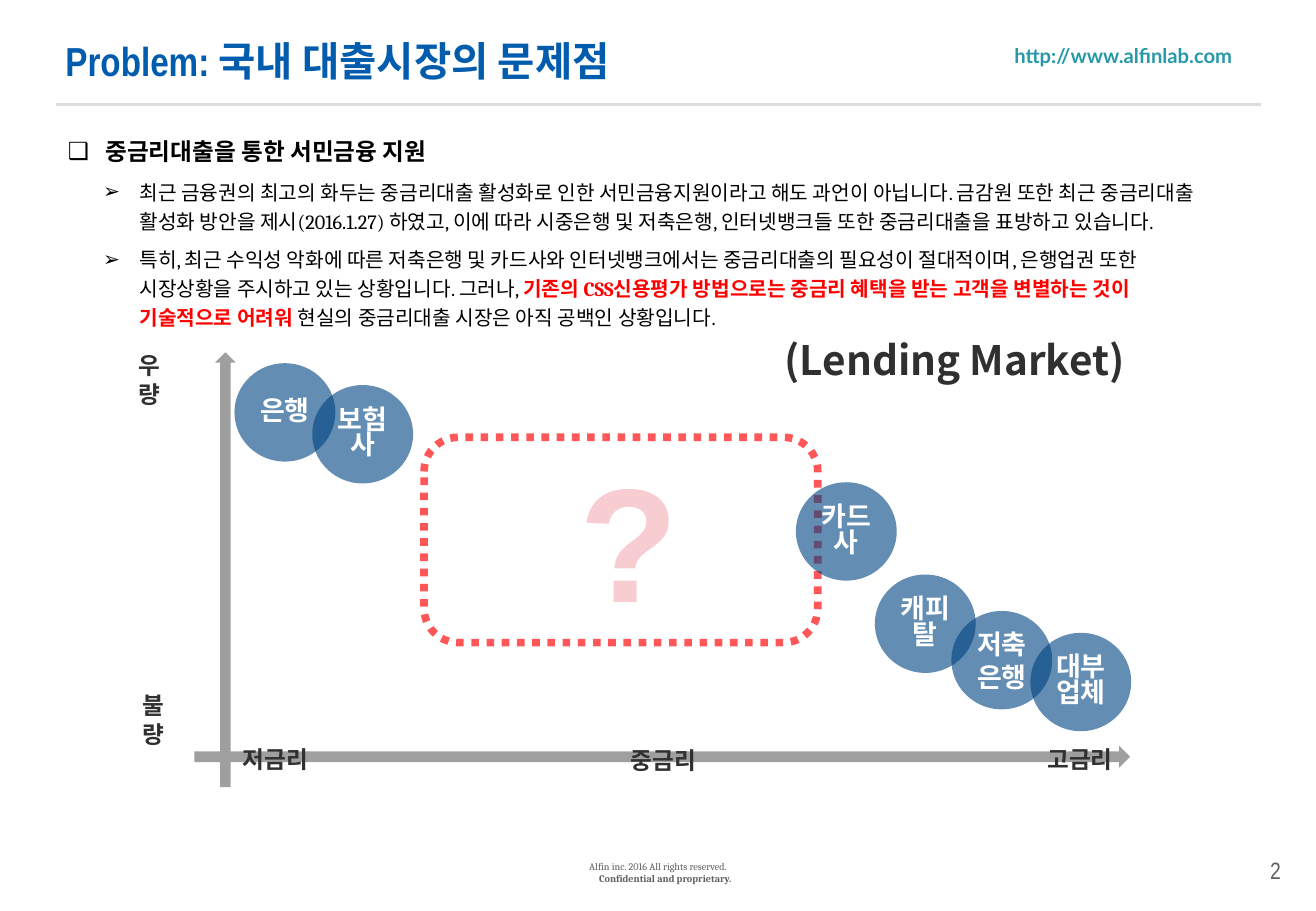
"""Build the lending market problem slide."""
from dataclasses import dataclass

from lxml.etree import SubElement
from pptx import Presentation
from pptx.dml.color import RGBColor
from pptx.enum.dml import MSO_LINE
from pptx.enum.shapes import MSO_CONNECTOR, MSO_SHAPE
from pptx.enum.text import MSO_ANCHOR, MSO_AUTO_SIZE, PP_ALIGN
from pptx.oxml.ns import qn
from pptx.util import Inches, Pt

Box = tuple[float, float, float, float]


@dataclass(frozen=True)
class Style:
    face: str
    size: float
    color: str
    bold: bool = False


@dataclass(frozen=True)
class Theme:
    rule: str = "DDDDDD"
    axis: str = "9F9F9F"
    lender: str = "014582"
    lender_alpha: int = 61
    gap: str = "FF0000"
    gap_alpha: int = 65
    korean: str = "Noto Sans CJK KR"
    bullet: str = "Arial"
    title: Style = Style("Arial Narrow", 24, "015CAE", True)
    site: Style = Style("Lato", 12, "2699A8", True)
    heading: Style = Style("Cambria", 14, "000000", True)
    body: Style = Style("Cambria", 12, "000000")
    footer: Style = Style("Cambria", 6, "5F5F5F")
    number: Style = Style("Arial Narrow", 14, "5F5F5F")
    circle: Style = Style("Noto Sans CJK KR", 16, "FFFFFF", True)
    label: Style = Style("Noto Sans CJK KR", 14, "303030", True)
    market: Style = Style("Noto Sans CJK KR", 24, "303030", True)
    question: Style = Style("Arial", 96, "F8CDD1", True)


@dataclass(frozen=True)
class Label:
    text: str
    box: Box
    style: Style
    align: PP_ALIGN = PP_ALIGN.LEFT
    anchor: MSO_ANCHOR = MSO_ANCHOR.MIDDLE
    inset: tuple[float, float] = (0.1, 0.05)
    spacing: float = 1.0
    wrap: bool = True


@dataclass(frozen=True)
class Lender:
    lines: tuple[str, ...]
    left: float
    top: float
    spacing: float = 0.8


@dataclass(frozen=True)
class Bullet:
    mark: str
    indent: float
    hang: float
    style: Style
    runs: tuple[tuple[str, bool], ...]


T = Theme()
CENTER, RIGHT, TOP = PP_ALIGN.CENTER, PP_ALIGN.RIGHT, MSO_ANCHOR.TOP
SNUG, NONE = (0.06, 0.06), (0, 0)

LABELS = [
    Label("http://www.alfinlab.com", (7.93, 0.19, 2.63, 0.54), T.site, CENTER),
    Label("2", (8.11, 7, 2.53, 0.35), T.number, RIGHT, TOP),
    Label("Problem: 국내 대출시장의 문제점", (0.44, 0.19, 9.95, 0.66), T.title, spacing=0.9),
    Label("?", (4.71, 3.88, 0.9, 1.25), T.question, CENTER, TOP, SNUG, 0.8),
    Label("우량", (1.08, 2.73, 0.47, 0.79), T.label, inset=SNUG, wrap=False),
    Label("불량", (1.11, 5.53, 0.47, 0.79), T.label, inset=SNUG, wrap=False),
    Label("저금리", (2, 6.13, 0.54, 0.44), T.label, anchor=TOP, inset=NONE, wrap=False),
    Label("중금리", (5.19, 6.14, 0.54, 0.44), T.label, anchor=TOP, inset=NONE, wrap=False),
    Label("고금리", (8.62, 6.13, 0.54, 0.44), T.label, anchor=TOP, inset=NONE, wrap=False),
    Label("(Lending Market)", (6.01, 2.67, 3.69, 0.58), T.market, CENTER, inset=SNUG),
]
LENDERS = [
    Lender(("은행",), 1.93, 2.99),
    Lender(("보험사",), 2.57, 3.17),
    Lender(("대부", "업체"), 8.48, 5.21),
    Lender(("저축", "은행"), 7.83, 5.03, 1.0),
    Lender(("캐피탈",), 7.2, 4.73),
    Lender(("카드사",), 6.55, 3.97),
]
BULLETS = [
    Bullet("❑", 0.31, 0.31, T.heading, (("중금리대출을 통한 서민금융 지원", False),)),
    Bullet("➢", 0.59, 0.3, T.body, ((
        "최근 금융권의 최고의 화두는 중금리대출 활성화로 인한 서민금융지원이라고 해도 과언이 아닙니다. "
        "금감원 또한 최근 중금리대출 활성화 방안을 제시(2016.1.27) 하였고, 이에 따라 시중은행 및 저축은행, "
        "인터넷뱅크들 또한 중금리대출을 표방하고 있습니다.", False),)),
    Bullet("➢", 0.59, 0.3, T.body, (
        ("특히, 최근 수익성 악화에 따른 저축은행 및 카드사와 인터넷뱅크에서는 중금리대출의 필요성이 "
         "절대적이며, 은행업권 또한 시장상황을 주시하고 있는 상황입니다. 그러나, ", False),
        ("기존의 CSS신용평가 방법으로는 중금리 혜택을 받는 고객을 변별하는 것이 기술적으로 어려워", True),
        (" 현실의 중금리대출 시장은 아직 공백인 상황입니다.", False))),
]


def rgb(color: str) -> RGBColor:
    return RGBColor.from_string(color)


def set_font(p, style: Style) -> None:
    f = p.font
    f.name, f.size, f.bold = style.face, Pt(style.size), style.bold
    f.color.rgb = rgb(style.color)
    SubElement(p._p.pPr.find(qn("a:defRPr")), qn("a:ea"), typeface=T.korean)


def set_frame(tf, inset: tuple[float, float], anchor: MSO_ANCHOR, wrap: bool = True) -> None:
    tf.margin_left = tf.margin_right = Inches(inset[0])
    tf.margin_top = tf.margin_bottom = Inches(inset[1])
    tf.vertical_anchor, tf.word_wrap = anchor, wrap


def set_indent(p, indent: float, hang: float) -> None:
    pPr = p._p.get_or_add_pPr()
    pPr.set("marL", str(Inches(indent)))
    pPr.set("indent", str(-Inches(hang)))


def set_alpha(part, percent: int) -> None:
    color = next(part.iter(qn("a:srgbClr")))
    SubElement(color, qn("a:alpha"), val=str(percent * 1000))


def add_text(s, box: Box, inset=(0.1, 0.05), anchor=TOP, wrap: bool = True):
    tf = s.shapes.add_textbox(*map(Inches, box)).text_frame
    set_frame(tf, inset, anchor, wrap)
    return tf


def add_label(s, label: Label) -> None:
    tf = add_text(s, label.box, label.inset, label.anchor, label.wrap)
    if not label.wrap:
        tf.auto_size = MSO_AUTO_SIZE.SHAPE_TO_FIT_TEXT
    p = tf.paragraphs[0]
    p.text, p.alignment, p.line_spacing = label.text, label.align, label.spacing
    set_font(p, label.style)


def add_filled(s, kind: MSO_SHAPE, box: Box, color: str):
    sp = s.shapes.add_shape(kind, *map(Inches, box))
    sp.shadow.inherit = False
    sp.fill.solid()
    sp.fill.fore_color.rgb = rgb(color)
    sp.line.fill.background()
    return sp


def add_lender(s, lender: Lender) -> None:
    sp = add_filled(s, MSO_SHAPE.OVAL, (lender.left, lender.top, 0.83, 0.81), T.lender)
    set_alpha(sp._element.spPr, T.lender_alpha)
    tf = sp.text_frame
    set_frame(tf, SNUG, MSO_ANCHOR.MIDDLE)
    tf.text = "\n".join(lender.lines)
    for p in tf.paragraphs:
        p.alignment, p.line_spacing = CENTER, lender.spacing
        set_font(p, T.circle)


def add_market_gap(s) -> None:
    sp = add_filled(s, MSO_SHAPE.ROUNDED_RECTANGLE, (3.49, 3.6, 3.24, 1.69), T.gap)
    sp.fill.background()
    sp.line.color.rgb = rgb(T.gap)
    sp.line.width, sp.line.dash_style = Pt(4.5), MSO_LINE.ROUND_DOT
    sp.line._ln.find(qn("a:prstDash")).set("val", "sysDot")
    set_alpha(sp.line._ln, T.gap_alpha)


def add_bullets(s) -> None:
    tf = add_text(s, (0.46, 1.03, 9.74, 1.79))
    for i, bullet in enumerate(BULLETS):
        p = tf.add_paragraph() if i else tf.paragraphs[0]
        set_indent(p, bullet.indent, bullet.hang)
        p.line_spacing, p.space_after = 1.2, Pt(bullet.style.size * 0.25)
        p.space_before = Pt(bullet.style.size * 0.2 if i else 0)
        SubElement(p._p.pPr, qn("a:buFont"), typeface=T.bullet)
        SubElement(p._p.pPr, qn("a:buChar"), char=bullet.mark)
        set_font(p, bullet.style)
        for text, stressed in bullet.runs:
            r = p.add_run()
            r.text = text
            if stressed:
                r.font.bold, r.font.color.rgb = True, rgb(T.gap)


def add_footer(s) -> None:
    p = add_text(s, (0, 7.03, 10.83, 0.3), anchor=MSO_ANCHOR.MIDDLE).paragraphs[0]
    p.alignment = CENTER
    set_indent(p, 0.12, 0.12)
    set_font(p, T.footer)
    p.add_run().text = "Alfin inc. 2016 All rights reserved."
    p.add_line_break()
    r = p.add_run()
    r.text, r.font.bold = "Confidential and proprietary.", True


def add_rule(s) -> None:
    ends = map(Inches, (0.46, 0.86, 10.38, 0.86))
    line = s.shapes.add_connector(MSO_CONNECTOR.STRAIGHT, *ends)
    line.line.color.rgb, line.line.width = rgb(T.rule), Pt(2.25)
    SubElement(line._element.spPr, qn("a:effectLst"))


def main() -> None:
    prs = Presentation()
    prs.slide_width, prs.slide_height = Inches(10.83), Inches(7.5)
    s = prs.slides.add_slide(prs.slide_layouts[6])
    add_footer(s)
    add_rule(s)
    add_bullets(s)
    add_filled(s, MSO_SHAPE.UP_ARROW, (1.77, 2.9, 0.17, 3.58), T.axis)
    add_filled(s, MSO_SHAPE.RIGHT_ARROW, (1.6, 6.14, 7.7, 0.18), T.axis)
    add_market_gap(s)
    for lender in LENDERS:
        add_lender(s, lender)
    for label in LABELS:
        add_label(s, label)
    prs.save("out.pptx")


if __name__ == "__main__":
    main()
